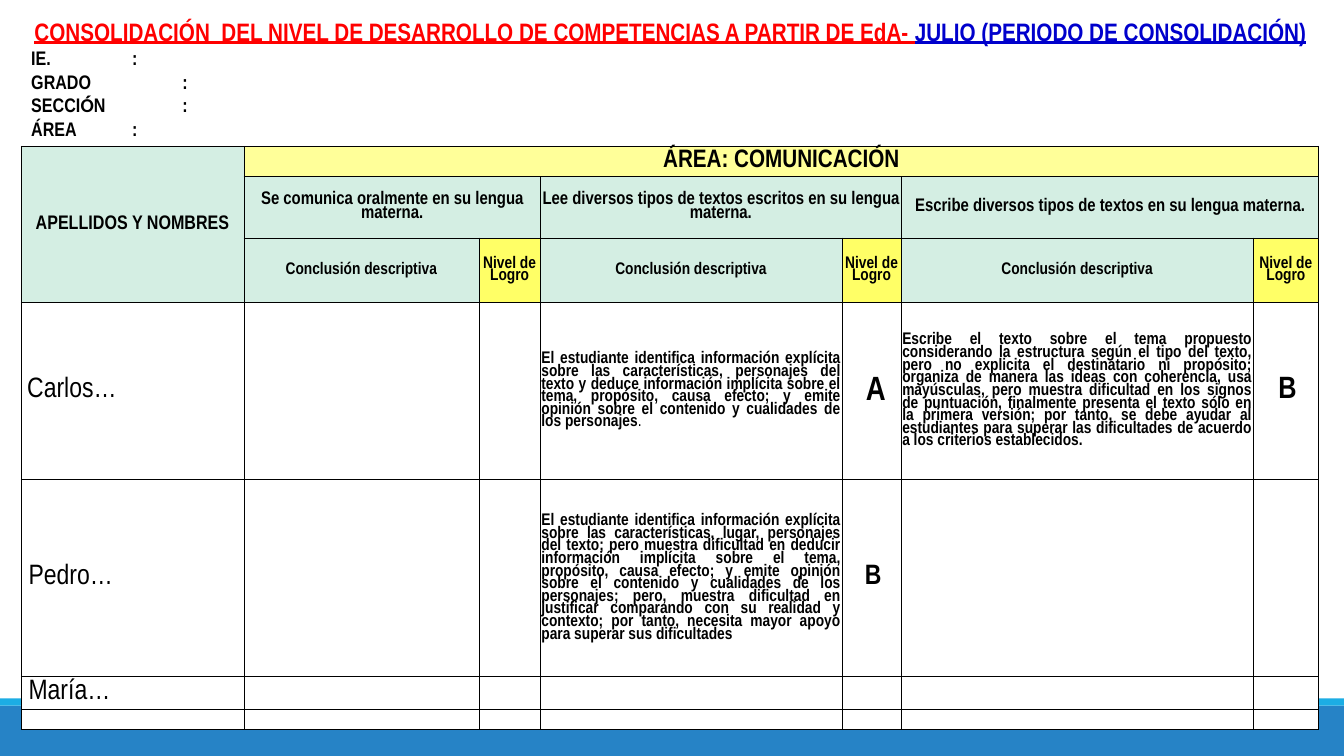
"""Build the slide that reports skill levels for July."""
from lxml.etree import SubElement
from pptx import Presentation
from pptx.dml.color import RGBColor
from pptx.enum.shapes import MSO_SHAPE
from pptx.enum.text import MSO_ANCHOR, MSO_AUTO_SIZE, PP_ALIGN
from pptx.oxml.ns import qn
from pptx.util import Inches, Pt

WIDE, HIGH = 13.33, 7.5
LEFT, SPAN = 0.21, 12.88
TOP, HEAD = 0.1, 1.35
COLS = [2.21, 2.33, 0.61, 2.99, 0.59, 3.49, 0.65]
ROWS = [0.3, 0.61, 0.64, 1.76, 1.95, 0.33, 0.2]

BLACK = RGBColor(0, 0, 0)
WHITE = RGBColor(0xFF, 0xFF, 0xFF)
RED = RGBColor(0xFF, 0, 0)
NAVY = RGBColor(0, 0, 0xCC)
BLUE = RGBColor(0x26, 0x83, 0xC6)
CYAN = RGBColor(0x1C, 0xAD, 0xE4)
MINT = RGBColor(0xD4, 0xEE, 0xE3)
PALE = RGBColor(0xFF, 0xFF, 0x99)
GOLD = RGBColor(0xFF, 0xFF, 0x66)

FONT, SERIF = "Arial Narrow", "Times New Roman"
MID, FULL = PP_ALIGN.CENTER, PP_ALIGN.JUSTIFY

SKILLS = [
    "Se comunica oralmente en su lengua materna.",
    "Lee diversos tipos de textos escritos en su lengua materna.",
    "Escribe diversos tipos de textos en su lengua materna.",
]
READS = (
    "El estudiante identifica información explícita sobre las características, "
    "personajes del texto y deduce información implícita sobre el tema, propósito, "
    "causa efecto; y emite opinión sobre el contenido y cualidades de los personajes"
)
WRITES = (
    "Escribe el texto sobre el tema propuesto considerando la estructura según el "
    "tipo del texto, pero no explicita el destinatario ni propósito; organiza de "
    "manera las ideas con coherencia, usa mayúsculas, pero muestra dificultad en los "
    "signos de puntuación, finalmente presenta el texto sólo en la primera versión; "
    "por tanto, se debe ayudar al estudiantes para superar las dificultades de "
    "acuerdo a los criterios establecidos."
)
NEEDS = (
    "El estudiante identifica información explícita sobre las características, "
    "lugar, personajes del texto; pero muestra dificultad en deducir información "
    "implícita sobre el tema, propósito, causa efecto; y emite opinión sobre el "
    "contenido y cualidades de los personajes; pero, muestra dificultad en "
    "justificar comparando con su realidad y contexto; por tanto, necesita mayor "
    "apoyo para superar sus dificultades"
)


def write(para, text, size=12, face=FONT, color=BLACK, bold=True, line=False):
    """Add one run of text with its format to a paragraph."""
    run = para.add_run()
    run.text = text
    font = run.font
    font.size, font.name = Pt(size), face
    font.bold, font.underline = bold, line
    font.color.rgb = color


def bar(slide, top, high, color):
    """Draw a band across the full width."""
    band = slide.shapes.add_shape(
        MSO_SHAPE.RECTANGLE, 0, Inches(top), Inches(WIDE), Inches(high))
    band.shadow.inherit = False
    band.fill.solid()
    band.fill.fore_color.rgb = color
    band.line.fill.background()


def header(slide):
    """Fill the title with the heading and the form fields."""
    title = slide.shapes.title
    title.left, title.top = Inches(LEFT), Inches(TOP)
    title.width, title.height = Inches(SPAN), Inches(HEAD)
    title.fill.solid()
    title.fill.fore_color.rgb = WHITE
    frame = title.text_frame
    frame.word_wrap, frame.auto_size = True, MSO_AUTO_SIZE.NONE
    frame.vertical_anchor = MSO_ANCHOR.MIDDLE
    para = frame.paragraphs[0]
    para.alignment = MID
    write(para, "CONSOLIDACIÓN  DEL NIVEL DE DESARROLLO DE COMPETENCIAS "
          "A PARTIR DE EdA- ", size=18, color=RED, line=True)
    write(para, "JULIO (PERIODO DE CONSOLIDACIÓN)", size=18, color=NAVY, line=True)
    fields = [["IE."], ["GRADO"], ["SECCI", "Ó", "N"], ["ÁREA"]]
    for parts in fields:
        para = frame.add_paragraph()
        para.alignment = PP_ALIGN.LEFT
        for part in parts:
            write(para, part, size=14, face="Calibri" if part == "Ó" else FONT)
        write(para, "\t\t:", size=14)


def frame_cell(cell):
    """Give a cell thin black borders, a white fill and tight margins."""
    props = cell._tc.get_or_add_tcPr()
    for side in ("lnL", "lnR", "lnT", "lnB"):
        edge = SubElement(props, qn("a:" + side), w=str(Pt(0.5)))
        fill = SubElement(edge, qn("a:solidFill"))
        SubElement(fill, qn("a:srgbClr"), val=str(BLACK))
    cell.fill.solid()
    cell.fill.fore_color.rgb = WHITE
    cell.margin_left = cell.margin_right = cell.margin_top = Inches(0.01)
    cell.margin_bottom = 0
    cell.vertical_anchor = MSO_ANCHOR.MIDDLE


def put(cell, *runs, align=MID, fill=WHITE):
    """Set the fill of a cell and write its (text, format) runs."""
    cell.fill.fore_color.rgb = fill
    para = cell.text_frame.paragraphs[0]
    para.alignment, para.line_spacing = align, 0.8
    for text, form in runs:
        write(para, text, **form)


def make_grid(slide):
    """Add the bordered table and return it."""
    grid = slide.shapes.add_table(
        len(ROWS), len(COLS), Inches(LEFT), Inches(TOP + HEAD),
        Inches(SPAN), Inches(sum(ROWS))).table
    grid.first_row = grid.horz_banding = False
    for col, wide in zip(grid.columns, COLS):
        col.width = Inches(wide)
    for row, high in zip(grid.rows, ROWS):
        row.height = Inches(high)
    for cell in grid.iter_cells():
        frame_cell(cell)
    return grid


def heads(grid):
    """Merge and label the three header rows."""
    grid.cell(0, 0).merge(grid.cell(2, 0))
    put(grid.cell(0, 0), ("APELLIDOS Y NOMBRES", {"size": 14}), fill=MINT)
    grid.cell(0, 1).merge(grid.cell(0, 6))
    put(grid.cell(0, 1), ("ÁREA: COMUNICACIÓN", {"size": 18}), fill=PALE)
    for col, skill in zip(range(1, len(COLS), 2), SKILLS):
        grid.cell(1, col).merge(grid.cell(1, col + 1))
        put(grid.cell(1, col), (skill, {"size": 13}), fill=MINT)
        put(grid.cell(2, col), ("Conclusión descriptiva", {}), fill=MINT)
        put(grid.cell(2, col + 1), ("Nivel de Logro", {}), fill=GOLD)


def body(grid):
    """Write the names, findings and levels of the pupils."""
    plain = {"size": 20, "bold": False}
    thin = {"size": 9, "face": SERIF, "bold": False}
    put(grid.cell(3, 0), (" ", {"size": 16, "bold": False}),
        ("Carlos…", plain), align=FULL)
    put(grid.cell(4, 0), (" Pedro…", plain), align=FULL)
    put(grid.cell(5, 0), (" María…", plain), align=FULL)
    put(grid.cell(3, 3), (READS, {}), (".", {"bold": False}), align=FULL)
    put(grid.cell(3, 5), (WRITES, {}), align=FULL)
    put(grid.cell(4, 3), (NEEDS, {}), align=FULL)
    put(grid.cell(3, 4), (" ", {"size": 24, "face": SERIF, "bold": False}),
        ("A", {"size": 24}))
    put(grid.cell(3, 6), (" ", thin), ("B", {"size": 22}))
    put(grid.cell(4, 4), (" ", thin), ("B", {"size": 20}))
    for cell in grid.iter_cells():
        if not cell.text_frame.text:
            para = cell.text_frame.paragraphs[0]
            SubElement(para._p, qn("a:endParaRPr"), sz="900")


def main():
    """Build the slide and save it."""
    deck = Presentation()
    deck.slide_width, deck.slide_height = Inches(WIDE), Inches(HIGH)
    slide = deck.slides.add_slide(deck.slide_layouts[5])
    bar(slide, 7, 0.5, BLUE)
    bar(slide, 6.93, 0.07, CYAN)
    header(slide)
    grid = make_grid(slide)
    heads(grid)
    body(grid)
    deck.save("out.pptx")


if __name__ == "__main__":
    main()
